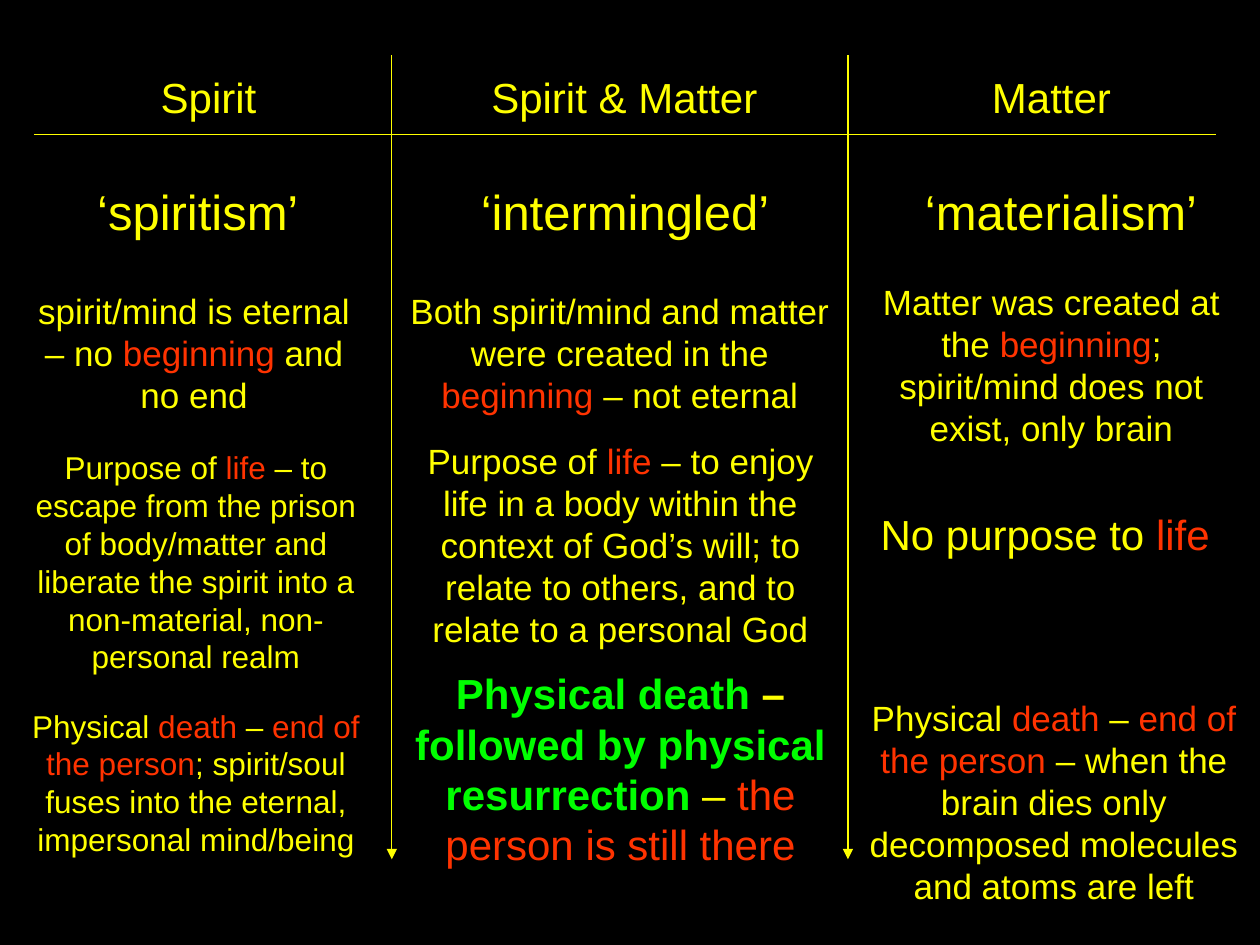
from dataclasses import dataclass

from lxml import etree
from pptx import Presentation
from pptx.dml.color import RGBColor
from pptx.enum import shapes, text
from pptx.oxml.ns import qn
from pptx.util import Inches, Pt

COLORS = {"background": "000000", "plain": "FFFF00", "key": "FF3300", "hope": "00FF00"}


@dataclass(frozen=True)
class Run:
    words: str
    color: str = "plain"
    bold: bool = False


@dataclass(frozen=True)
class Passage:
    left: float
    top: float
    width: float
    height: float
    size: int
    runs: tuple[Run, ...]
    align: text.PP_ALIGN = text.PP_ALIGN.CENTER


@dataclass(frozen=True)
class Rule:
    start: tuple[float, float]
    end: tuple[float, float]
    arrow: bool = False


def rgb(name: str) -> RGBColor:
    return RGBColor.from_string(COLORS[name])


def key(words: str) -> Run:
    return Run(words, "key")


def draw_rule(slide, rule: Rule) -> None:
    line = slide.shapes.add_connector(
        shapes.MSO_CONNECTOR.STRAIGHT, *map(Inches, rule.start + rule.end))
    line.line.color.rgb = rgb("plain")
    line.line.width = Pt(0.75)
    if rule.arrow:
        etree.SubElement(line.line._get_or_add_ln(), qn("a:tailEnd"), type="triangle")
    etree.SubElement(line._element.spPr, qn("a:effectLst"))


def draw_passage(slide, passage: Passage) -> None:
    place = (passage.left, passage.top, passage.width, passage.height)
    frame = slide.shapes.add_textbox(*map(Inches, place)).text_frame
    frame.word_wrap = True
    frame.auto_size = text.MSO_AUTO_SIZE.SHAPE_TO_FIT_TEXT
    paragraph = frame.paragraphs[0]
    paragraph.alignment = passage.align
    paragraph.font.name = "Arial"
    paragraph.font.size = Pt(passage.size)
    for part in passage.runs:
        run = paragraph.add_run()
        run.text = part.words
        run.font.color.rgb = rgb(part.color)
        if part.bold:
            run.font.bold = True


RULES = [Rule((x, 0.44), (x, 6.82), arrow=True) for x in (3.11, 6.73)]
RULES.append(Rule((0.27, 1.07), (9.65, 1.07)))

HEADINGS = [
    Passage(left, 0.52, 2.91, 0.5, 24, (Run(words),))
    for left, words in ((0.2, "Spirit"), (3.5, "Spirit & Matter"), (6.89, "Matter"))
]
WORLDVIEWS = [
    Passage(left, 1.39, width, 0.57, 28, (Run(words),))
    for left, width, words in (
        (0.35, 2.44, "‘spiritism’"),
        (3.66, 2.6, "‘intermingled’"),
        (7.2, 2.44, "‘materialism’"),
    )
]
BEGINNINGS = [
    Passage(0.2, 2.25, 2.68, 1.1, 20, (
        Run("spirit/mind is eternal – no "), key("beginning"), Run(" and no end"))),
    Passage(3.11, 2.25, 3.62, 1.1, 20, (
        Run("Both spirit/mind and matter were created in the "),
        key("beginning"), Run(" – not eternal"))),
    Passage(6.81, 2.18, 3.07, 1.43, 20, (
        Run("Matter was created at the "), key("beginning"),
        Run("; spirit/mind does not exist, only brain"))),
]
PURPOSES = [
    Passage(0.12, 3.51, 2.87, 1.9, 18, (
        Run("Purpose of "), key("life"),
        Run(" – to escape from the prison of body/matter and liberate the spirit "
            "into a non-material, non-personal realm"))),
    Passage(3.27, 3.44, 3.31, 1.77, 20, (
        Run("Purpose of "), key("life"),
        Run(" – to enjoy life in a body within the context of God’s will; "
            "to relate to others, and to relate to a personal God"))),
    Passage(6.89, 3.99, 2.91, 0.5, 24, (
        Run("No purpose to "), key("life")), text.PP_ALIGN.LEFT),
]
DEATHS = [
    Passage(0.12, 5.56, 2.87, 1.3, 18, (
        Run("Physical "), key("death"), Run(" – "), key("end of the person"),
        Run("; spirit/soul fuses into the eternal, impersonal mind/being"))),
    Passage(3.19, 5.25, 3.47, 1.7, 24, (
        Run("Physical death", "hope", True), Run(" – ", bold=True),
        Run("followed by physical resurrection", "hope", True),
        Run(" – "), key("the person is still there"))),
    Passage(6.73, 5.48, 3.27, 1.77, 20, (
        Run("Physical "), key("death"), Run(" –"), key(" end of the person "),
        Run("– when the brain dies only decomposed molecules and atoms are left"))),
]


def main() -> None:
    deck = Presentation()
    deck.slide_width, deck.slide_height = Inches(10), Inches(7.5)
    slide = deck.slides.add_slide(deck.slide_layouts[6])
    slide.background.fill.solid()
    slide.background.fill.fore_color.rgb = rgb("background")
    for rule in RULES:
        draw_rule(slide, rule)
    for passage in HEADINGS + WORLDVIEWS + BEGINNINGS + PURPOSES + DEATHS:
        draw_passage(slide, passage)
    deck.save("out.pptx")


if __name__ == "__main__":
    main()
